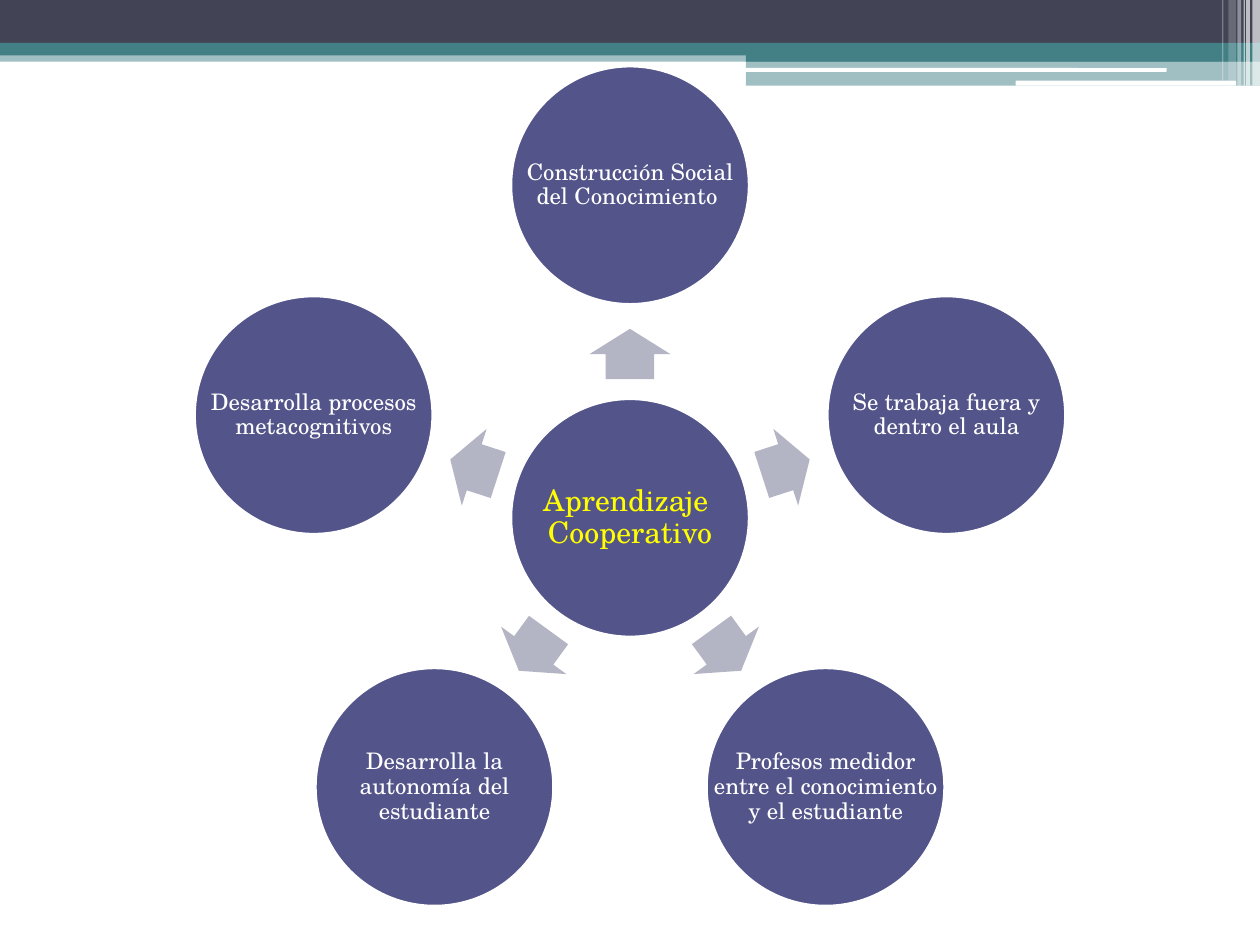
from math import cos, radians, sin

from lxml.etree import SubElement
from pptx import Presentation
from pptx.dml.color import RGBColor
from pptx.enum.shapes import MSO_SHAPE as Shape
from pptx.enum.text import MSO_ANCHOR as Anchor, PP_ALIGN as Align
from pptx.oxml.ns import qn
from pptx.util import Inches, Pt

COLORS = {
    "white": "FFFFFF",
    "slate": "424456",
    "teal": "438086",
    "circle": "53548A",
    "arrow": "B3B4C4",
    "yellow": "FFFF00",
}
FONT = "TeX Gyre Schola"

CENTER_X, CENTER_Y = 5, 4.11
CIRCLE_SIZE = 1.89
CIRCLE_ORBIT, ARROW_ORBIT = 2.64, 1.3
ARROW_LENGTH, ARROW_WIDTH = 0.4, 0.64

# Left, top, width, height, color, opacity in percent
HEADER_BANDS = [
    (0, 0.4, 10, 0.09, "teal", 50),
    (0, 0, 10, 0.34, "slate", 100),
    (0, 0.34, 10, 0.1, "teal", 100),
    (5.92, 0.39, 4.08, 0.1, "teal", 100),
    (5.92, 0.48, 4.08, 0.2, "teal", 50),
]
HEADER_RULES = [(5.91, 0.54, 3.35, 0.03), (8.06, 0.64, 1.75, 0.04)]
# Left, width, height, opacity in percent
HEADER_STRIPES = [
    (9.94, 0.06, 0.68, 65),
    (9.89, 0.03, 0.68, 65),
    (9.87, 0.01, 0.68, 60),
    (9.82, 0.03, 0.68, 40),
    (9.75, 0.06, 0.64, 20),
    (9.7, 0.01, 0.64, 30),
]
# Clockwise from the top
IDEAS = [
    "Construcción Social del Conocimiento ",
    "Se trabaja fuera y dentro el aula",
    "Profesos medidor entre el conocimiento y el estudiante",
    "Desarrolla la autonomía del estudiante",
    "Desarrolla procesos metacognitivos",
]


class SlideBuilder:
    def __init__(self, slide):
        self.shapes = slide.shapes

    def shape(self, kind, left, top, width, height, color, opacity=100):
        shape = self.shapes.add_shape(
            kind, Inches(left), Inches(top), Inches(width), Inches(height))
        shape.shadow.inherit = False
        shape.fill.solid()
        shape.fill.fore_color.rgb = RGBColor.from_string(COLORS[color])
        shape.line.fill.background()
        if opacity < 100:
            fill_color = shape.fill._xPr.find(qn("a:solidFill"))[0]
            SubElement(fill_color, qn("a:alpha"), val=str(opacity * 1000))
        return shape

    def label(self, left, top, size, text, points, color):
        box = self.shapes.add_textbox(
            Inches(left), Inches(top), Inches(size), Inches(size))
        frame = box.text_frame
        frame.word_wrap = True
        frame.vertical_anchor = Anchor.MIDDLE
        frame.margin_left = frame.margin_right = Inches(0.02)
        frame.margin_top = frame.margin_bottom = Inches(0.02)
        paragraph = frame.paragraphs[0]
        paragraph.alignment = Align.CENTER
        paragraph.line_spacing = 0.9
        run = paragraph.add_run()
        run.text = text
        run.font.name = FONT
        run.font.size = Pt(points)
        run.font.color.rgb = RGBColor.from_string(COLORS[color])

    def circle(self, center_x, center_y, text, points=13, color="white"):
        left, top = center_x - CIRCLE_SIZE / 2, center_y - CIRCLE_SIZE / 2
        circle = self.shape(
            Shape.OVAL, left, top, CIRCLE_SIZE, CIRCLE_SIZE, "circle")
        circle.line.color.rgb = RGBColor.from_string(COLORS["white"])
        circle.line.width = Pt(1.5)
        self.label(left, top, CIRCLE_SIZE, text, points, color)

    def arrow(self, center_x, center_y, angle):
        arrow = self.shape(
            Shape.RIGHT_ARROW, center_x - ARROW_LENGTH / 2,
            center_y - ARROW_WIDTH / 2, ARROW_LENGTH, ARROW_WIDTH, "arrow")
        arrow.adjustments[0] = 0.6
        arrow.adjustments[1] = 0.5
        arrow.rotation = angle % 360


def orbit_point(radius, angle):
    return (CENTER_X + radius * cos(radians(angle)),
            CENTER_Y + radius * sin(radians(angle)))


def main():
    presentation = Presentation()
    presentation.slide_width = Inches(10)
    presentation.slide_height = Inches(7.5)
    builder = SlideBuilder(
        presentation.slides.add_slide(presentation.slide_layouts[6]))

    # Header decoration
    for band in HEADER_BANDS:
        builder.shape(Shape.RECTANGLE, *band)
    for rule in HEADER_RULES:
        builder.shape(Shape.ROUNDED_RECTANGLE, *rule, "white")
    for left, width, height, opacity in HEADER_STRIPES:
        builder.shape(Shape.RECTANGLE, left, 0, width, height, "white", opacity)

    # Central topic
    builder.circle(CENTER_X, CENTER_Y, "Aprendizaje  Cooperativo", 17, "yellow")

    # Ideas around the topic, each with its arrow
    for index, idea in enumerate(IDEAS):
        angle = -90 + index * 360 / len(IDEAS)
        builder.arrow(*orbit_point(ARROW_ORBIT, angle), angle)
        builder.circle(*orbit_point(CIRCLE_ORBIT, angle), idea)

    presentation.save("out.pptx")


if __name__ == "__main__":
    main()
